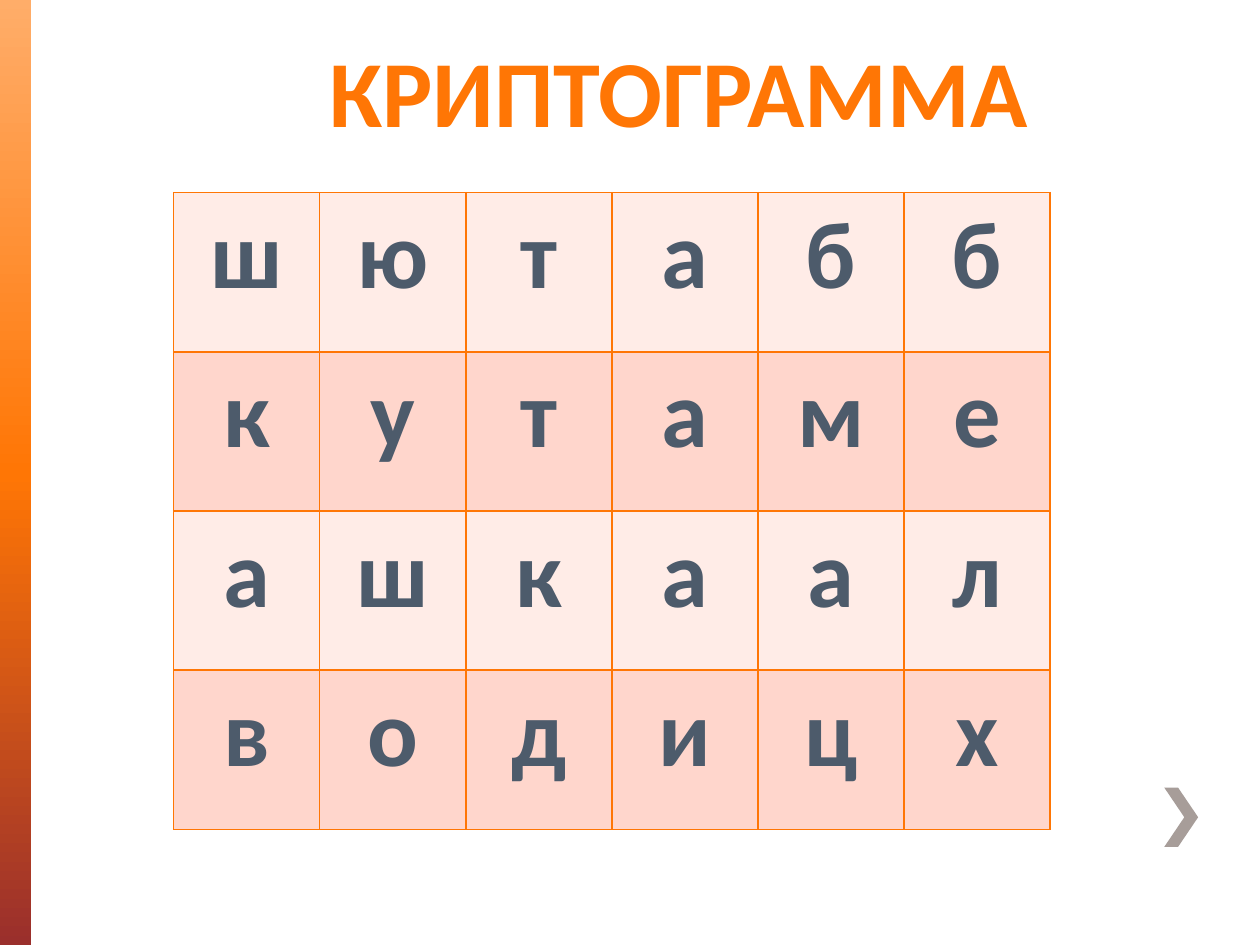
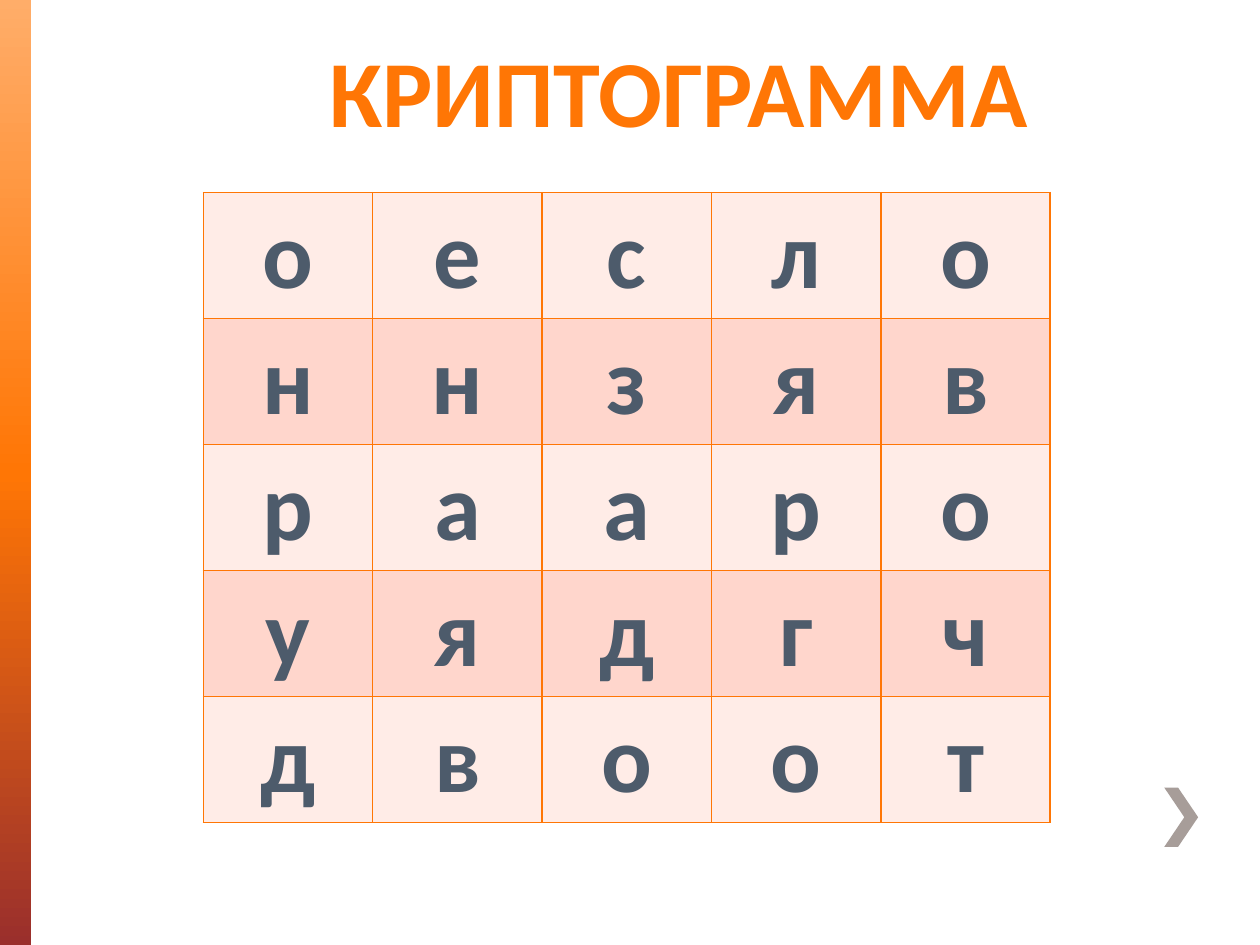
from dataclasses import dataclass

from lxml.etree import SubElement
from pptx import Presentation
from pptx.dml.color import RGBColor
from pptx.enum.shapes import MSO_SHAPE as Shape
from pptx.enum.text import MSO_ANCHOR as Anchor, MSO_AUTO_SIZE as AutoSize, PP_ALIGN as Align
from pptx.oxml.ns import qn
from pptx.presentation import Presentation as Deck
from pptx.slide import Slide
from pptx.table import _Cell as Cell
from pptx.text.text import TextFrame
from pptx.util import Pt

ORANGE = RGBColor(0xFF, 0x76, 0x05)
LIGHT_ORANGE = RGBColor(0xFF, 0xAD, 0x69)
BRICK = RGBColor(0x9A, 0x2F, 0x2C)
SLATE = RGBColor(0x4D, 0x5B, 0x6B)
WARM_GRAY = RGBColor(0xA7, 0x9D, 0x99)
ROW_FILLS = (RGBColor(0xFF, 0xEC, 0xE7), RGBColor(0xFF, 0xD6, 0xCC))

FONT = "Calibri"
TEXT_SIZE = Pt(54)
TITLE = "КРИПТОГРАММА"
TITLE_ONLY_LAYOUT = 5
GRID_TOP = 110
BAND_STOPS = ((0, LIGHT_ORANGE), (50, ORANGE), (100, BRICK))
CHEVRON = ((673.2, 450), (665.3, 450), (676.8, 467), (665.3, 484), (673.2, 484), (684.7, 467))


@dataclass(frozen=True)
class LetterGrid:
    rows: tuple[str, ...]
    left: float
    column_width: float
    row_height: float


GRIDS = (
    LetterGrid(("шютабб", "кутаме", "ашкаал", "водицх"), 99.2, 83.5, 91),
    LetterGrid(("оесло", "ннзяв", "рааро", "уядгч", "двоот"), 116.2, 96.8, 72),
)


def set_text(frame: TextFrame, text: str, color: RGBColor) -> None:
    frame.text = text
    para = frame.paragraphs[0]
    para.alignment = Align.CENTER
    font = para.runs[0].font
    font.name, font.size, font.bold = FONT, TEXT_SIZE, True
    font.color.rgb = color


def add_band(slide: Slide, height: int) -> None:
    band = slide.shapes.add_shape(Shape.RECTANGLE, 0, 0, Pt(18), height)
    band.shadow.inherit = False
    band.line.fill.background()
    band.fill.gradient()
    band.fill.gradient_angle = 270
    stops = band._element.spPr.find(".//" + qn("a:gsLst"))
    for stop in list(stops):
        stops.remove(stop)
    for percent, color in BAND_STOPS:
        stop = SubElement(stops, qn("a:gs"), pos=str(percent * 1000))
        SubElement(stop, qn("a:srgbClr"), val=str(color))


def add_chevron(slide: Slide) -> None:
    points = [(Pt(x), Pt(y)) for x, y in CHEVRON]
    builder = slide.shapes.build_freeform(*points[0])
    builder.add_line_segments(points[1:], close=True)
    chevron = builder.convert_to_shape()
    chevron.shadow.inherit = False
    chevron.fill.solid()
    chevron.fill.fore_color.rgb = WARM_GRAY
    chevron.line.fill.background()


def add_title(slide: Slide) -> None:
    title = slide.shapes.title
    title.left, title.top, title.width, title.height = Pt(178.6), Pt(15), Pt(418.3), Pt(73)
    frame = title.text_frame
    set_text(frame, TITLE, ORANGE)
    frame.auto_size = AutoSize.NONE
    frame.word_wrap = False
    frame.vertical_anchor = Anchor.TOP


def add_borders(cell: Cell) -> None:
    properties = cell._tc.get_or_add_tcPr()
    for side in ("lnL", "lnR", "lnT", "lnB"):
        line = SubElement(properties, qn(f"a:{side}"), w=str(Pt(1)))
        SubElement(SubElement(line, qn("a:solidFill")), qn("a:srgbClr"), val=str(ORANGE))


def add_letter_grid(slide: Slide, grid: LetterGrid) -> None:
    row_count, column_count = len(grid.rows), len(grid.rows[0])
    table = slide.shapes.add_table(
        row_count, column_count, Pt(grid.left), Pt(GRID_TOP),
        Pt(grid.column_width * column_count), Pt(grid.row_height * row_count),
    ).table
    table.first_row = table.horz_banding = False
    for column in table.columns:
        column.width = Pt(grid.column_width)
    for index, letters in enumerate(grid.rows):
        table.rows[index].height = Pt(grid.row_height)
        for column_index, letter in enumerate(letters):
            cell = table.cell(index, column_index)
            cell.margin_top, cell.margin_bottom = Pt(3.6), 0
            add_borders(cell)
            cell.fill.solid()
            cell.fill.fore_color.rgb = ROW_FILLS[index % 2]
            set_text(cell.text_frame, letter, SLATE)


def add_cryptogram(deck: Deck, grid: LetterGrid) -> None:
    slide = deck.slides.add_slide(deck.slide_layouts[TITLE_ONLY_LAYOUT])
    add_band(slide, deck.slide_height)
    add_chevron(slide)
    add_title(slide)
    add_letter_grid(slide, grid)


def main() -> None:
    deck = Presentation()
    deck.slide_width, deck.slide_height = Pt(720), Pt(540)
    for grid in GRIDS:
        add_cryptogram(deck, grid)
    deck.save("out.pptx")


if __name__ == "__main__":
    main()
